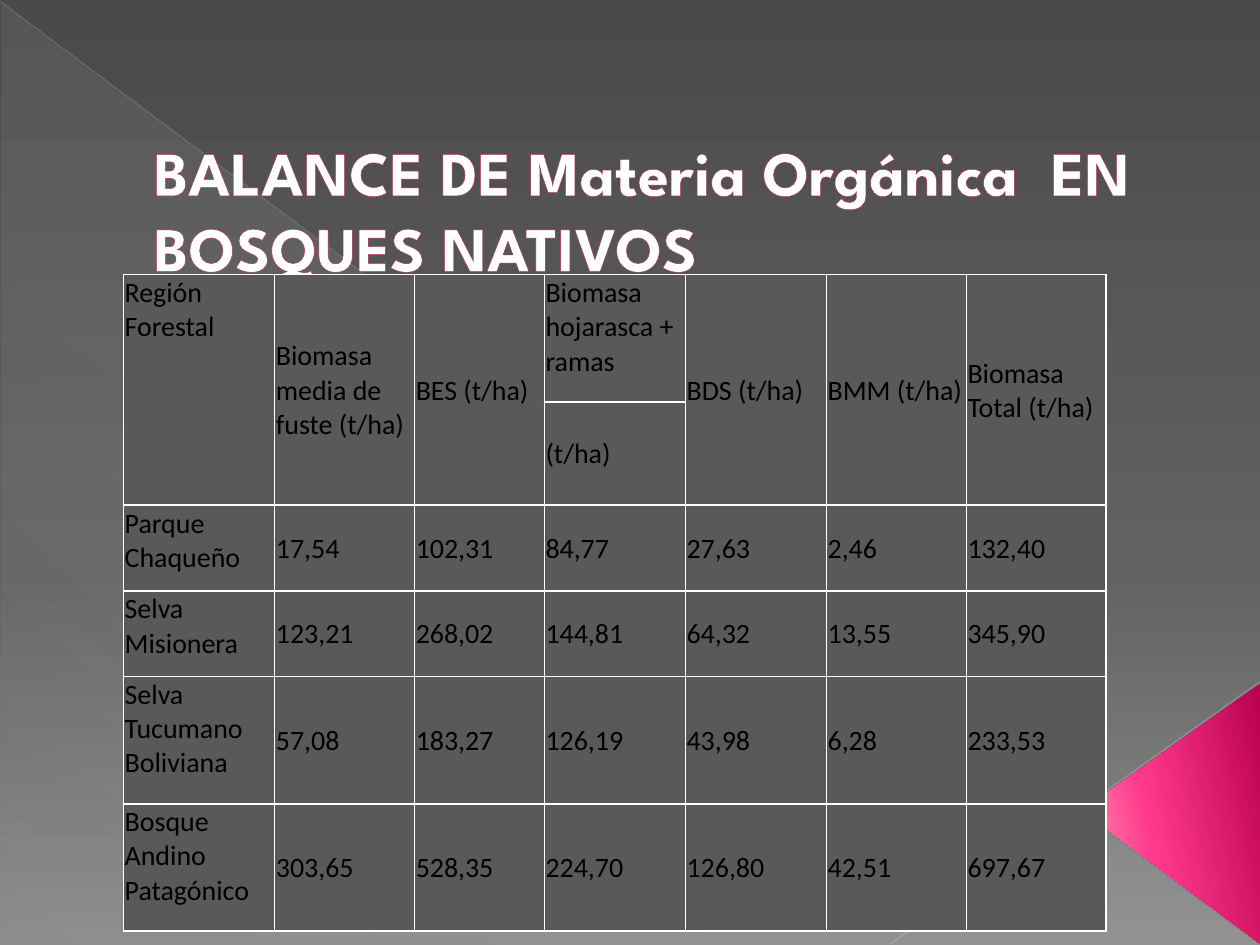
import pptx
import pptx.dml.color
import pptx.enum.shapes
import pptx.enum.text
import pptx.oxml
import pptx.oxml.ns
import pptx.util
from pptx.util import Inches

COLORS = {
    "white": "FFFFFF", "black": "000000", "cell": "595959",
    "title_edge": "B12761", "diagonal": "BFBFBF", "corner": "C6C6C6",
}
BACKDROP = [(0, "4A4A4A", 100), (60, "626262", 100), (100, "8C8C8C", 100)]
SHEEN = [(0, "D2D2D2", 10), (70, "D2D2D2", 8), (100, "D2D2D2", 1)]
PINK = [(0, "B8014E", 100), (60, "FF388C", 100), (100, "FF9CB9", 100)]

HEADERS = ["Región Forestal", "Biomasa media de fuste (t/ha)", "BES (t/ha)",
           "Biomasa hojarasca + ramas", "BDS (t/ha)", "BMM (t/ha)",
           "Biomasa Total (t/ha)"]
LITTER = 3  # the only header column split over two rows
REGIONS = [
    ["Parque Chaqueño", "17,54", "102,31", "84,77", "27,63", "2,46", "132,40"],
    ["Selva Misionera", "123,21", "268,02", "144,81", "64,32", "13,55", "345,90"],
    ["Selva Tucumano Boliviana", "57,08", "183,27", "126,19", "43,98", "6,28", "233,53"],
    ["Bosque Andino Patagónico", "303,65", "528,35", "224,70", "126,80", "42,51", "697,67"],
]
COLUMN_WIDTHS = [1.2, 1.11, 1.03, 1.12, 1.12, 1.11, 1.11]
ROW_HEIGHTS = [1.01, 0.82, 0.68, 0.68, 1.01, 1.01]


def rgb(name):
    return pptx.dml.color.RGBColor.from_string(COLORS[name])


def xml(markup):
    """Parse one element whose tag has the a: prefix."""
    tag_end = min(i for i in (markup.find(" "), markup.find(">"), markup.find("/"))
                  if i > 0)
    return pptx.oxml.parse_xml(
        markup[:tag_end] + " " + pptx.oxml.ns.nsdecls("a") + markup[tag_end:])


def outline(tag, color, points):
    return xml(f'<a:{tag} w="{round(points * 12700)}"><a:solidFill>'
               f'<a:srgbClr val="{COLORS[color]}"/></a:solidFill></a:{tag}>')


def paint_gradient(owner, fill, stops, angle):
    """Stops are (position, colour, opacity), all but the colour in percent."""
    fill.gradient()
    blank = next(owner.element.iter(pptx.oxml.ns.qn("a:gradFill")))
    marks = "".join(
        f'<a:gs pos="{at * 1000}"><a:srgbClr val="{color}">'
        f'<a:alpha val="{opacity * 1000}"/></a:srgbClr></a:gs>'
        for at, color, opacity in stops)
    blank.getparent().replace(blank, xml(
        f'<a:gradFill rotWithShape="1"><a:gsLst>{marks}</a:gsLst>'
        f'<a:lin ang="{angle * 60000}" scaled="0"/></a:gradFill>'))


def add_triangle(slide, kind, box, stops, angle):
    triangle = slide.shapes.add_shape(kind, *map(Inches, box))
    triangle.shadow.inherit = False
    triangle.line.fill.background()
    paint_gradient(triangle, triangle.fill, stops, angle)
    return triangle


def add_hairline(slide, start, end, color, points, opacity):
    hairline = slide.shapes.add_connector(
        pptx.enum.shapes.MSO_CONNECTOR.STRAIGHT, *map(Inches, start + end))
    hairline.line.color.rgb = rgb(color)
    hairline.line.width = pptx.util.Pt(points)
    tint = next(hairline.element.iter(pptx.oxml.ns.qn("a:srgbClr")))
    tint.append(xml(f'<a:alpha val="{opacity * 1000}"/>'))
    hairline.element.spPr.append(xml("<a:effectLst/>"))


def add_backdrop(slide, width, height):
    shapes = pptx.enum.shapes.MSO_SHAPE
    paint_gradient(slide, slide.background.fill, BACKDROP, 90)
    add_triangle(slide, shapes.RIGHT_TRIANGLE,
                 (0.01, 0.02, width - 0.02, height - 0.02), SHEEN, 133)
    add_hairline(slide, (0, 0.01), (width - 0.01, height - 0.01), "diagonal", 0.39, 35)
    add_hairline(slide, (width, 5.41), (7.07, height - 0.01), "corner", 0.47, 45)
    wedge = add_triangle(slide, shapes.ISOSCELES_TRIANGLE,
                         (8.26, 5.75, 2.07, 1.42), PINK, 258)
    wedge.adjustments[0] = 0.513
    wedge.rotation = 270


def style_font(font, name, size, color):
    font.name = name
    font.size = pptx.util.Pt(size)
    font.color.rgb = rgb(color)


def add_title(slide, box, text):
    frame = slide.shapes.add_textbox(*map(Inches, box)).text_frame
    frame.word_wrap = True
    frame.vertical_anchor = pptx.enum.text.MSO_ANCHOR.MIDDLE
    heading = frame.paragraphs[0]
    style_font(heading.font, "League Spartan", 36, "white")
    heading.font.bold = True
    heading._p.get_or_add_pPr().set("marL", str(Inches(0.53)))
    run = heading.add_run()
    run.text = text
    run._r.get_or_add_rPr().insert(0, outline("ln", "title_edge", 0.5))


def style_cell(cell, centred):
    cell.fill.solid()
    cell.fill.fore_color.rgb = rgb("cell")
    cell.margin_left = cell.margin_right = cell.margin_top = Inches(0.01)
    cell.margin_bottom = 0
    if centred:
        cell.vertical_anchor = pptx.enum.text.MSO_ANCHOR.MIDDLE
    style_font(cell.text_frame.paragraphs[0].font, "Calibri", 16, "black")
    properties = cell._tc.get_or_add_tcPr()
    for place, side in enumerate(("lnL", "lnR", "lnT", "lnB")):
        properties.insert(place, outline(side, "white", 1))


def add_biomass_table(slide, left, top):
    units = ["(t/ha)" if col == LITTER else "" for col in range(len(HEADERS))]
    content = [HEADERS, units] + REGIONS
    table = slide.shapes.add_table(
        len(content), len(HEADERS), Inches(left), Inches(top),
        Inches(sum(COLUMN_WIDTHS)), Inches(sum(ROW_HEIGHTS))).table
    table.first_row = table.horz_banding = False
    for column, width in zip(table.columns, COLUMN_WIDTHS):
        column.width = Inches(width)
    for row, height in zip(table.rows, ROW_HEIGHTS):
        row.height = Inches(height)
    for r, texts in enumerate(content):
        for c, text in enumerate(texts):
            cell = table.cell(r, c)
            cell.text = text
            style_cell(cell, centred=c > 0 and (r, c) != (0, LITTER))
    for c in range(len(HEADERS)):
        if c != LITTER:
            table.cell(0, c).merge(table.cell(1, c))


def main():
    deck = pptx.Presentation()
    deck.slide_width, deck.slide_height = Inches(10), Inches(7.5)
    slide = deck.slides.add_slide(deck.slide_layouts[6])
    add_backdrop(slide, 10, 7.5)
    add_title(slide, (0.59, 0.85, 8.82, 1.61),
              "BALANCE DE Materia Orgánica  EN BOSQUES NATIVOS")
    add_biomass_table(slide, 0.98, 2.18)
    deck.save("out.pptx")


if __name__ == "__main__":
    main()
